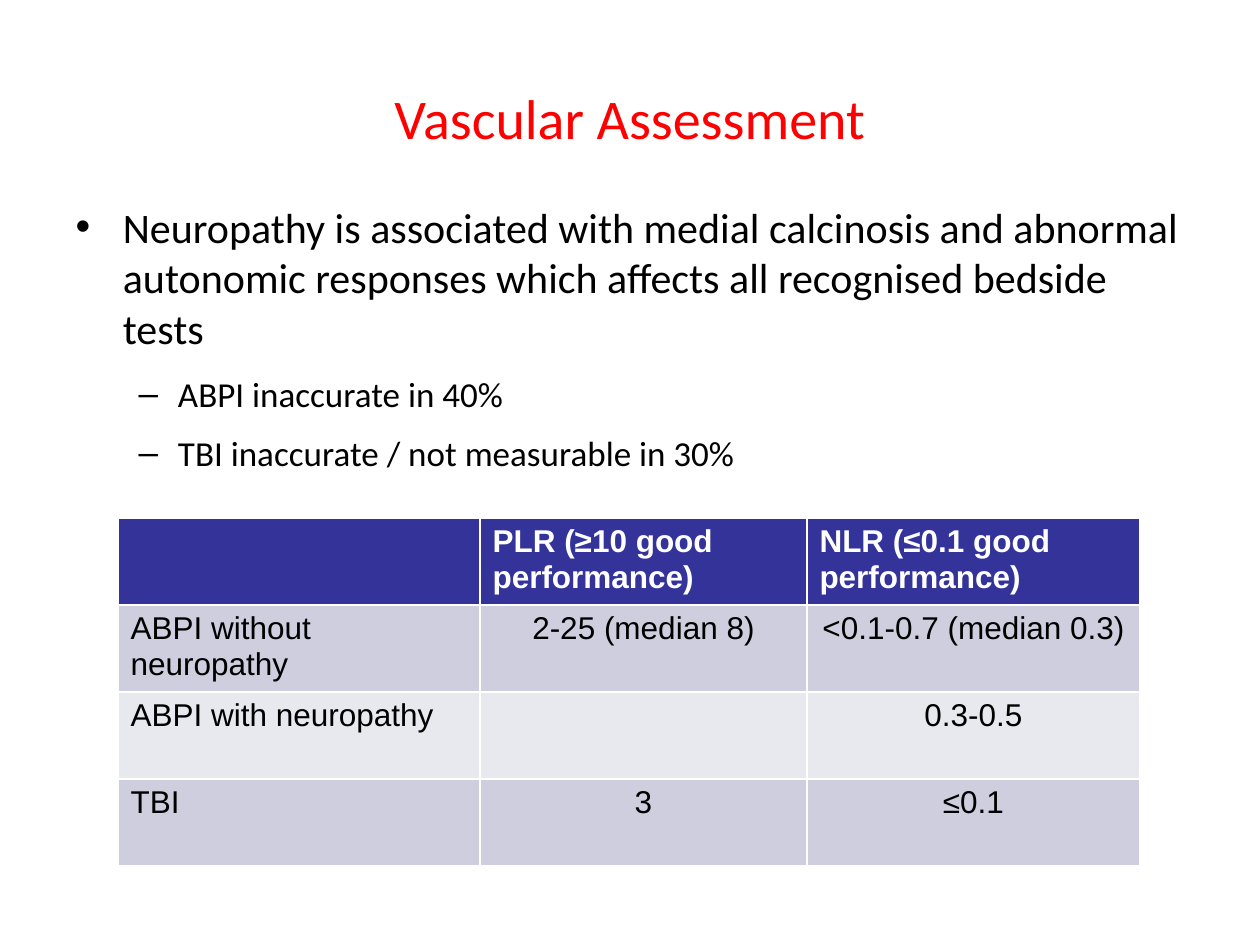
from pptx import Presentation
from pptx.dml.color import RGBColor
from pptx.enum.text import MSO_ANCHOR, PP_ALIGN
from pptx.util import Pt

PX = 914400 // 126
RED = RGBColor(0xFF, 0x00, 0x00)
BLACK = RGBColor(0x00, 0x00, 0x00)
WHITE = RGBColor(0xFF, 0xFF, 0xFF)
NAVY = RGBColor(0x33, 0x33, 0x99)
LAVENDER = RGBColor(0xCE, 0xCE, 0xDE)
PALE = RGBColor(0xE8, 0xE8, 0xEF)


def place(part, left, top, width, height):
    part.left, part.top = left * PX, top * PX
    part.width, part.height = width * PX, height * PX


def style(paragraph, font, size, color, bold=False):
    for run in paragraph.runs:
        run.font.name = font
        run.font.size = Pt(size)
        run.font.color.rgb = color
        run.font.bold = bold


prs = Presentation()
prs.slide_width, prs.slide_height = 1260 * PX, 945 * PX
slide = prs.slides.add_slide(prs.slide_layouts[1])

heading = slide.shapes.title
place(heading, 63, 38, 1134, 158)
heading.text_frame.text = "Vascular Assessment"
heading.text_frame.vertical_anchor = MSO_ANCHOR.MIDDLE
style(heading.text_frame.paragraphs[0], "Calibri", 32, RED)

findings = slide.placeholders[1]
place(findings, 63, 195, 1134, 649)
points = [
    (0, 24, "Neuropathy is associated with medial calcinosis and abnormal "
            "autonomic responses which affects all recognised bedside tests"),
    (1, 20, "ABPI inaccurate in 40%"),
    (1, 20, "TBI inaccurate / not measurable in 30%"),
]
findings.text_frame.text = "\n".join(text for _, _, text in points)
for paragraph, (level, size, _) in zip(findings.text_frame.paragraphs, points):
    paragraph.level = level
    paragraph.space_before = Pt(size * 0.2)
    paragraph.space_after = Pt(size * 0.3)
    style(paragraph, "Calibri", size, BLACK)

ratios = [
    ("", "PLR (≥10 good performance)", "NLR (≤0.1 good performance)"),
    ("ABPI without neuropathy", "2-25 (median 8)", "<0.1-0.7 (median 0.3)"),
    ("ABPI with neuropathy", "", "0.3-0.5"),
    ("TBI", "3", "≤0.1"),
]
column_widths = [362, 327, 333]
row_height = 87
likelihood = slide.shapes.add_table(
    len(ratios), len(column_widths), 118 * PX, 518 * PX,
    sum(column_widths) * PX, len(ratios) * row_height * PX).table
for column, width in zip(likelihood.columns, column_widths):
    column.width = width * PX

for r, values in enumerate(ratios):
    likelihood.rows[r].height = row_height * PX
    is_header = r == 0
    fill = NAVY if is_header else LAVENDER if r % 2 else PALE
    for c, value in enumerate(values):
        cell = likelihood.cell(r, c)
        cell.fill.solid()
        cell.fill.fore_color.rgb = fill
        cell.text_frame.text = value
        paragraph = cell.text_frame.paragraphs[0]
        paragraph.alignment = PP_ALIGN.LEFT if is_header or c == 0 else PP_ALIGN.CENTER
        style(paragraph, "Arial", 18, WHITE if is_header else BLACK, is_header)

prs.save("out.pptx")
